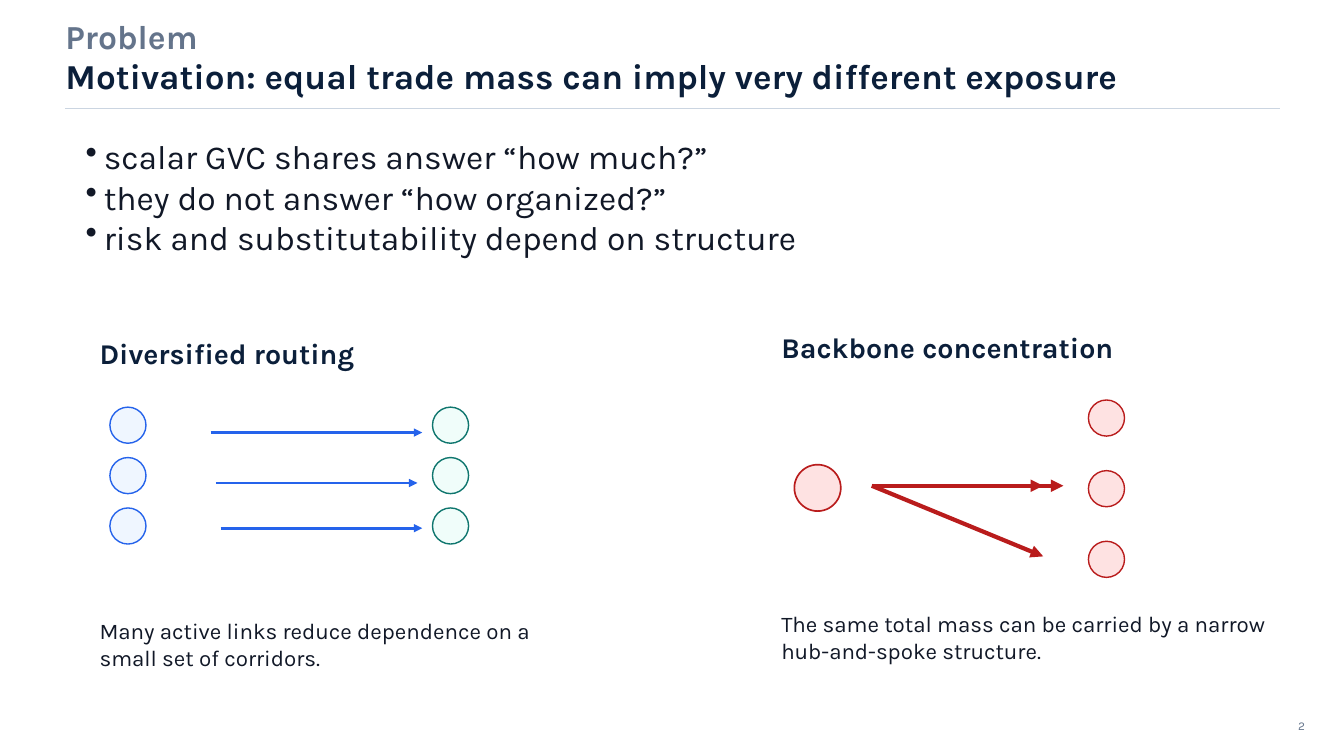
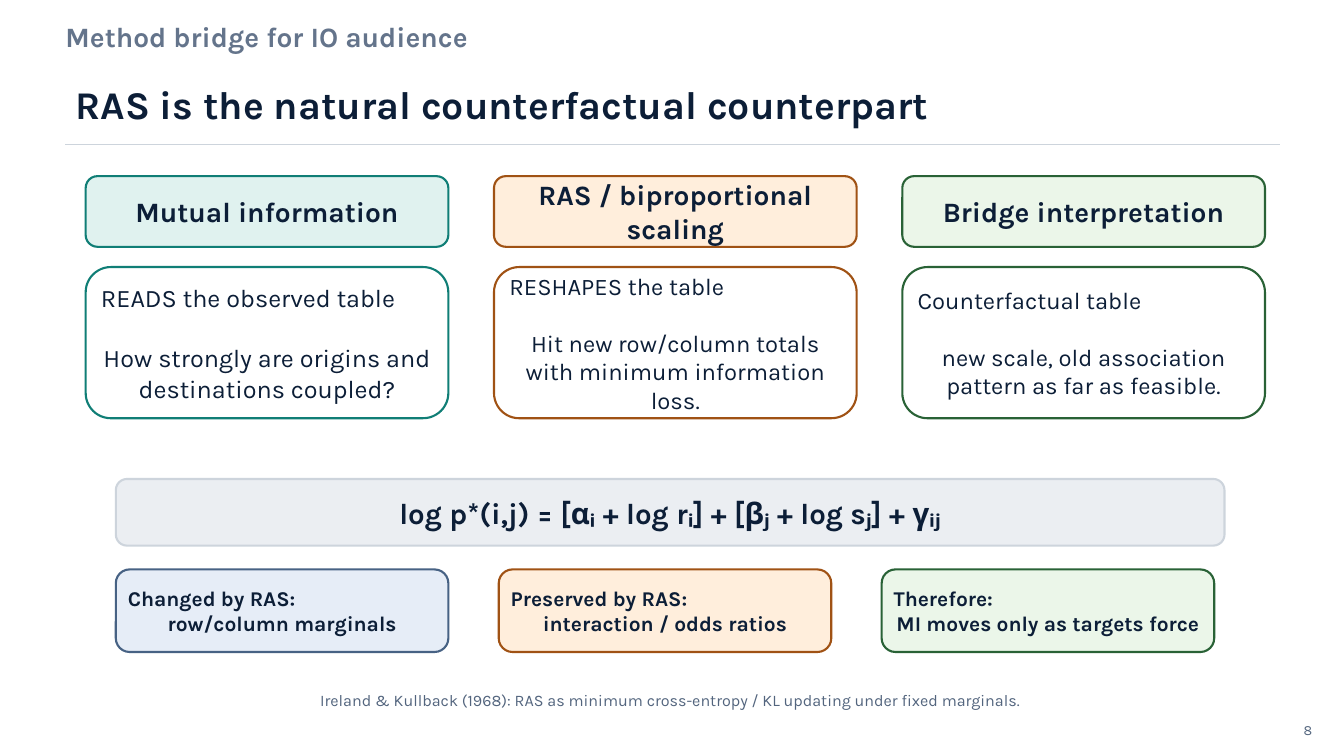
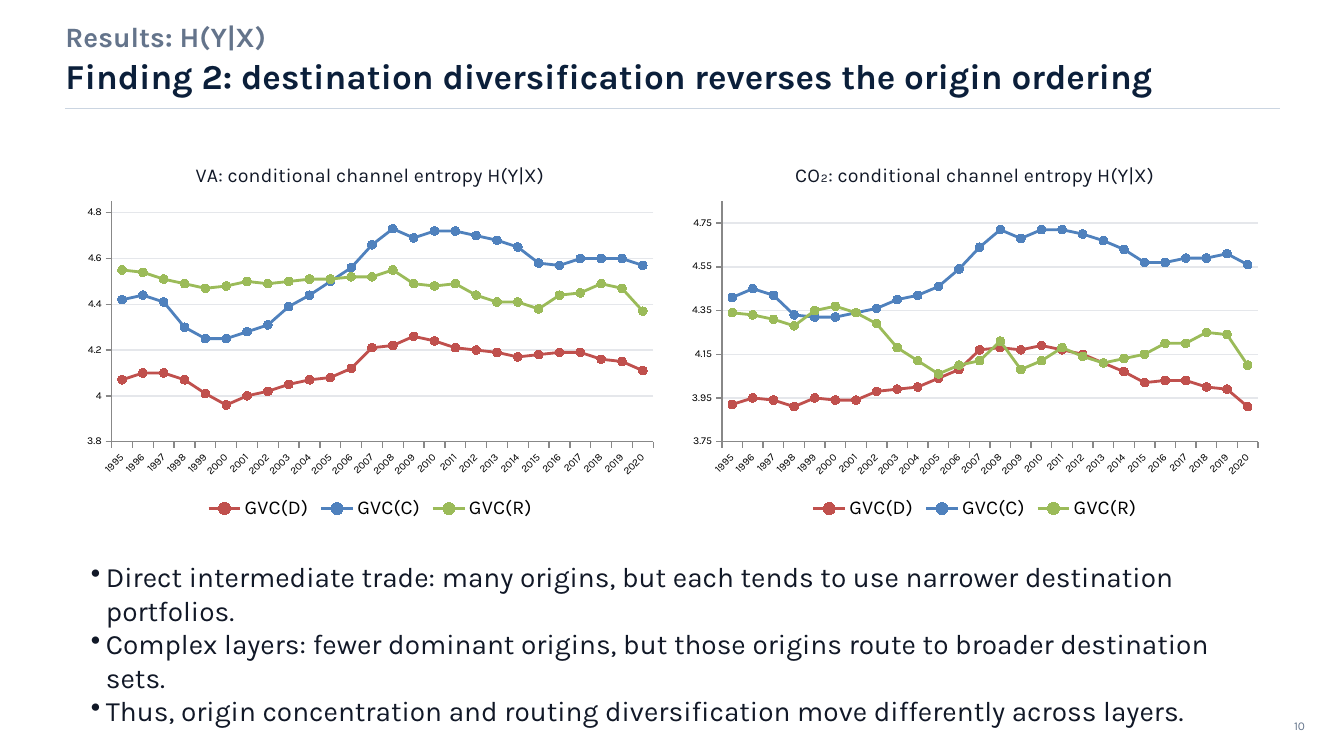
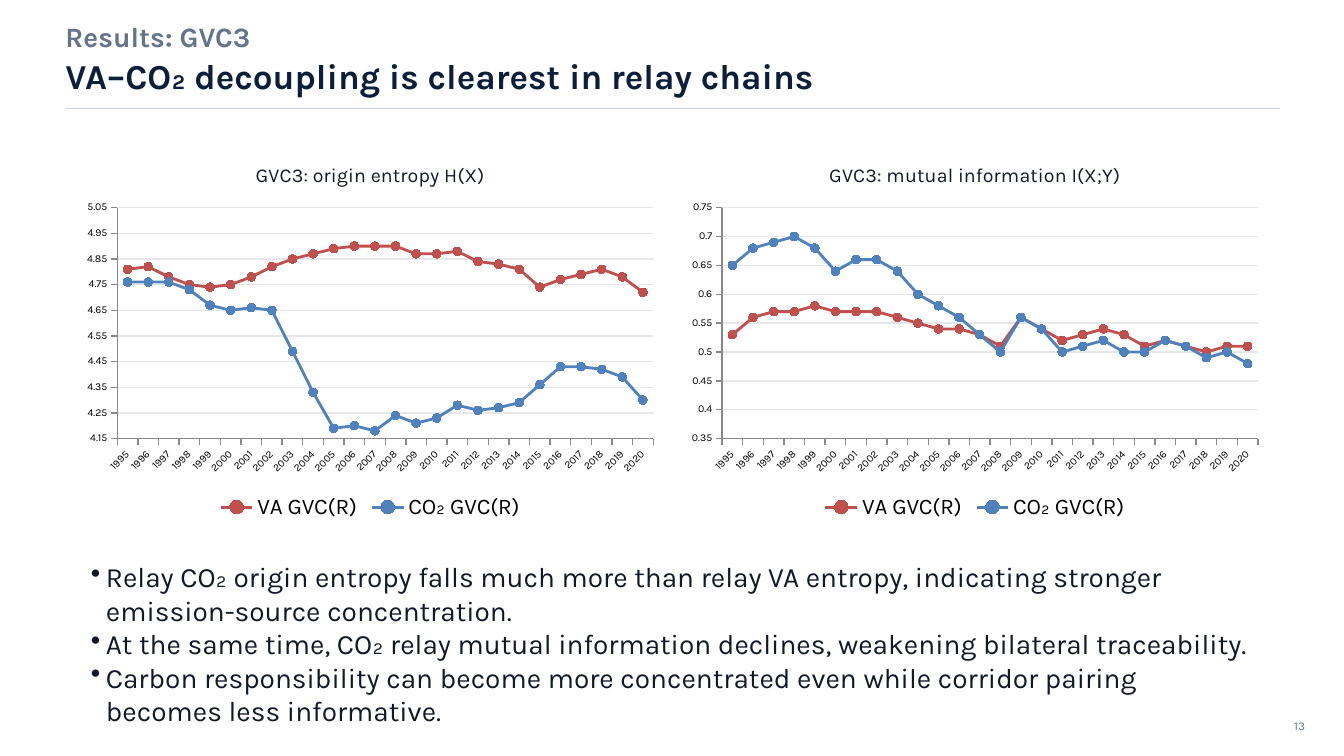
from lxml import etree
from pptx import Presentation
from pptx.chart.data import CategoryChartData
from pptx.dml.color import RGBColor
from pptx.enum.chart import (XL_CHART_TYPE, XL_LEGEND_POSITION, XL_MARKER_STYLE,
                             XL_TICK_LABEL_POSITION, XL_TICK_MARK)
from pptx.enum.shapes import MSO_CONNECTOR, MSO_SHAPE
from pptx.enum.text import MSO_ANCHOR, MSO_AUTO_SIZE, PP_ALIGN
from pptx.oxml.ns import qn
from pptx.util import Cm, Pt

LINE_MARKERS = XL_CHART_TYPE.LINE_MARKERS
BOTTOM = XL_LEGEND_POSITION.BOTTOM
DOT = XL_MARKER_STYLE.CIRCLE
LOW = XL_TICK_LABEL_POSITION.LOW
OUTSIDE = XL_TICK_MARK.OUTSIDE
STRAIGHT = MSO_CONNECTOR.STRAIGHT
OVAL, ROUNDED = MSO_SHAPE.OVAL, MSO_SHAPE.ROUNDED_RECTANGLE
TOP, MIDDLE = MSO_ANCHOR.TOP, MSO_ANCHOR.MIDDLE
LEFT, CENTER, RIGHT = PP_ALIGN.LEFT, PP_ALIGN.CENTER, PP_ALIGN.RIGHT

FONT = "Karla"
WHITE = RGBColor(0xFF, 0xFF, 0xFF)
BLACK = RGBColor(0, 0, 0)
NAVY = RGBColor(0x0B, 0x1F, 0x3A)
INK = RGBColor(0x11, 0x18, 0x27)
SLATE = RGBColor(0x64, 0x74, 0x8B)
RULE = RGBColor(0xCB, 0xD5, 0xE1)
AXIS = RGBColor(0x88, 0x88, 0x88)
GRID = RGBColor(0xE5, 0xE7, 0xEB)
BLUE = RGBColor(0x25, 0x63, 0xEB)
PALE_BLUE = RGBColor(0xEF, 0xF6, 0xFF)
GREEN = RGBColor(0x0F, 0x76, 0x6E)
PALE_GREEN = RGBColor(0xF0, 0xFD, 0xFA)
RED = RGBColor(0xB9, 0x1C, 0x1C)
PALE_RED = RGBColor(0xFE, 0xE2, 0xE2)
DEEP_NAVY = RGBColor(0x0C, 0x1E, 0x37)
STEEL = RGBColor(0x53, 0x65, 0x7E)
TEAL = RGBColor(0x10, 0x7E, 0x76)
PALE_TEAL = RGBColor(0xE0, 0xF2, 0xEF)
BROWN = RGBColor(0xA0, 0x52, 0x14)
PEACH = RGBColor(0xFF, 0xEE, 0xDC)
FOREST = RGBColor(0x29, 0x62, 0x36)
PALE_FOREST = RGBColor(0xEB, 0xF6, 0xE9)
DENIM = RGBColor(0x47, 0x62, 0x84)
PALE_DENIM = RGBColor(0xE6, 0xED, 0xF7)
SILVER = RGBColor(0xCD, 0xD4, 0xDC)
MIST = RGBColor(0xEB, 0xEE, 0xF2)
SERIES = (RGBColor(0xC0, 0x50, 0x4D), RGBColor(0x4F, 0x81, 0xBD), RGBColor(0x9B, 0xBB, 0x59))

YEARS = [str(year) for year in range(1995, 2021)]


def set_font(font, size, color, bold=False):
    font.name, font.size, font.bold = FONT, Pt(size), bold
    font.color.rgb = color


def set_line(line, color, width):
    line.color.rgb = color
    line.width = Pt(width)


class Deck:
    def __init__(self):
        self.prs = Presentation()
        self.prs.slide_width, self.prs.slide_height = Cm(33.87), Cm(19.05)
        self.s = None

    def new_slide(self, kicker, title, number, kicker_size=20):
        self.start(kicker, kicker_size)
        self.title(title, (1.65, 1.32, 30.23, 1.14), 25, NAVY)
        self.line((1.65, 2.74), (32.26, 2.74), RULE, 0.7)
        self.text(number, (32.13, 18.03, 0.76, 0.51), 8.5, SLATE, align=RIGHT)

    def start(self, kicker, size):
        self.s = self.prs.slides.add_slide(self.prs.slide_layouts[5])
        self.text(kicker, (1.65, 0.64, 10.67, 0.56), size, SLATE, bold=True)

    def frame(self, tf, anchor=MIDDLE, inset=(0, 0)):
        tf.word_wrap = True
        tf.auto_size = MSO_AUTO_SIZE.NONE
        tf.vertical_anchor = anchor
        tf.margin_left = tf.margin_right = Cm(inset[0])
        tf.margin_top = tf.margin_bottom = Cm(inset[1])
        return tf

    def run(self, p, text, size, color, bold=False, align=LEFT):
        p.alignment = align
        r = p.add_run()
        r.text = text
        set_font(r.font, size, color, bold)

    def title(self, text, box, size, color, inset=0):
        sp = self.s.shapes.title
        sp.left, sp.top, sp.width, sp.height = map(Cm, box)
        tf = self.frame(sp.text_frame, MIDDLE, (inset, 0))
        self.run(tf.paragraphs[0], text, size, color, True)

    def text(self, text, box, size, color, bold=False, align=LEFT):
        sp = self.s.shapes.add_textbox(*map(Cm, box))
        tf = self.frame(sp.text_frame)
        self.run(tf.paragraphs[0], text, size, color, bold, align)

    def bullets(self, items, box, size):
        tf = self.frame(self.s.shapes.add_textbox(*map(Cm, box)).text_frame, TOP)
        hang = Cm(size * 0.019)
        for i, item in enumerate(items):
            p = tf.add_paragraph() if i else tf.paragraphs[0]
            pPr = p._p.get_or_add_pPr()
            pPr.set("marL", str(hang))
            pPr.set("indent", str(-hang))
            etree.SubElement(pPr, qn("a:buChar")).set("char", "•")
            self.run(p, item, size, INK)

    def line(self, start, end, color, width, arrow=False):
        sp = self.s.shapes.add_connector(STRAIGHT, *map(Cm, start + end))
        set_line(sp.line, color, width)
        spPr = sp._element.spPr
        if arrow:
            etree.SubElement(spPr.find(qn("a:ln")), qn("a:tailEnd")).set("type", "triangle")
        etree.SubElement(spPr, qn("a:effectLst"))

    def shape(self, kind, box, fill, color, width):
        sp = self.s.shapes.add_shape(kind, *map(Cm, box))
        sp.shadow.inherit = False
        sp.fill.solid()
        sp.fill.fore_color.rgb = fill
        set_line(sp.line, color, width)
        return sp

    def node(self, left, top, fill, color, size=0.91, width=1):
        self.shape(OVAL, (left, top, size, size), fill, color, width)

    def card(self, box, fill, color, text, size, bold=False, lead=None, gap=0):
        sp = self.shape(ROUNDED, box, fill, color, 1.5)
        tf = self.frame(sp.text_frame, MIDDLE, (0.2, 0.1))
        p = tf.paragraphs[0]
        if lead:
            self.run(p, lead, size, DEEP_NAVY, bold)
            p = tf.add_paragraph()
            p.space_before = Pt(gap)
        self.run(p, text, size, DEEP_NAVY, bold, CENTER)

    def chart(self, left, title, series, low, high, unit, legend_size):
        data = CategoryChartData()
        data.categories = YEARS
        for name, values in series:
            data.add_series(name, values)
        chart = self.s.shapes.add_chart(
            LINE_MARKERS, Cm(left), Cm(3.68), Cm(14.86), Cm(9.53), data).chart
        set_font(chart.font, 10, BLACK)
        chart.has_title = True
        self.run(chart.chart_title.text_frame.paragraphs[0], title, 14, INK, align=CENTER)
        chart.has_legend = True
        chart.legend.position = BOTTOM
        chart.legend.include_in_layout = False
        set_font(chart.legend.font, legend_size, BLACK)
        years, values = chart.category_axis, chart.value_axis
        for axis in (years, values):
            axis.major_tick_mark = OUTSIDE
            set_font(axis.tick_labels.font, 7.5, BLACK)
            set_line(axis.format.line, AXIS, 1)
        years.tick_label_position = LOW
        years._element.find(qn("c:txPr")).find(qn("a:bodyPr")).set("rot", "-2700000")
        values.minimum_scale, values.maximum_scale, values.major_unit = low, high, unit
        set_line(values.major_gridlines.format.line, GRID, 1)
        plot = chart.plots[0]
        plot.vary_by_categories = False
        for ser, color in zip(plot.series, SERIES):
            ser.smooth = False
            set_line(ser.format.line, color, 2)
            ser.marker.style, ser.marker.size = DOT, 6
            ser.marker.format.fill.solid()
            ser.marker.format.fill.fore_color.rgb = color
            ser.marker.format.line.color.rgb = color

    def chart_pair(self, names, charts, legend_size, bullets):
        for i, (title, scale, rows) in enumerate(charts):
            self.chart(1.9 + i * 15.24, title, list(zip(names, rows)), *scale, legend_size)
        self.bullets(bullets, (2.29, 14.1, 29.46, 4.32), 20)


def motivation(deck):
    deck.new_slide("Problem", "Motivation: equal trade mass can imply very different exposure",
                   "2", kicker_size=24)
    for x1, x2, y in ((5.31, 10.64, 10.9), (5.44, 10.52, 12.17), (5.56, 10.64, 13.31)):
        deck.line((x1, y), (x2, y), BLUE, 2, arrow=True)
    for end in ((26.29, 12.24), (26.8, 12.24), (26.29, 14.02)):
        deck.line((21.97, 12.24), end, RED, 3, arrow=True)
    deck.node(20.02, 11.71, PALE_RED, RED, 1.17, 1.2)
    for i in range(3):
        deck.node(2.77, 10.26 + i * 1.27, PALE_BLUE, BLUE)
        deck.node(10.9, 10.26 + i * 1.27, PALE_GREEN, GREEN)
        deck.node(27.43, 10.08 + i * 1.78, PALE_RED, RED)
    panels = (
        (2.51, 8.53, 11.68, "Diversified routing",
         "Many active links reduce dependence on a small set of corridors."),
        (19.69, 8.36, 13.21, "Backbone concentration",
         "The same total mass can be carried by a narrow hub-and-spoke structure."),
    )
    for left, top, width, heading, note in panels:
        deck.text(heading, (left, top, width, 0.76), 20.4, NAVY, bold=True)
        deck.text(note, (left, top + 6.93, width, 1.52), 16, INK)
    deck.bullets(("scalar GVC shares answer “how much?”",
                  "they do not answer “how organized?”",
                  "risk and substitutability depend on structure"),
                 (2.16, 3.43, 28.7, 3.96), 24)


def method_bridge(deck):
    deck.start("Method bridge for IO audience", 20)
    deck.title("RAS is the natural counterfactual counterpart",
               (1.65, 1.83, 30.48, 1.55), 28, DEEP_NAVY, inset=0.25)
    deck.line((1.65, 3.65), (32.26, 3.65), SILVER, 0.7)
    columns = (
        ("Mutual information", PALE_TEAL, TEAL, "READS the observed table",
         "How strongly are origins and destinations coupled?", 18),
        ("RAS / biproportional scaling", PEACH, BROWN, "RESHAPES the table",
         "Hit new row/column totals with minimum information loss.", 17),
        ("Bridge interpretation", PALE_FOREST, FOREST, "Counterfactual table",
         "new scale, old association pattern as far as feasible.", 17),
    )
    for i, (heading, fill, color, lead, body, size) in enumerate(columns):
        left = 2.16 + i * 10.29
        deck.card((left, 4.44, 9.14, 1.78), fill, color, heading, 20, bold=True)
        deck.card((left, 6.73, 9.14, 3.81), WHITE, color, body, size,
                  lead=lead, gap=size * 1.2)
    deck.card((2.92, 12.07, 27.94, 1.68), MIST, SILVER,
              "log p*(i,j) = [αᵢ + log rᵢ] + [βⱼ + log sⱼ] + γᵢⱼ", 21, bold=True)
    notes = (
        (PALE_DENIM, DENIM, "Changed by RAS:", "row/column marginals"),
        (PEACH, BROWN, "Preserved by RAS:", "interaction / odds ratios"),
        (PALE_FOREST, FOREST, "Therefore:", "MI moves only as targets force"),
    )
    for i, (fill, color, lead, body) in enumerate(notes):
        deck.card((2.92 + i * 9.65, 14.35, 8.38, 2.08), fill, color, body, 15,
                  bold=True, lead=lead)
    deck.text("Ireland & Kullback (1968): RAS as minimum cross-entropy / KL updating "
              "under fixed marginals.", (2.54, 17.4, 28.7, 0.5), 11.5, STEEL, align=CENTER)
    deck.text("8", (32.18, 18.16, 0.89, 0.46), 10, STEEL, align=RIGHT)


def destination_finding(deck):
    deck.new_slide("Results: H(Y|X)",
                   "Finding 2: destination diversification reverses the origin ordering", "10")
    charts = (
        ("VA: conditional channel entropy H(Y|X)", (3.8, 4.85, 0.2), (
            (4.07, 4.1, 4.1, 4.07, 4.01, 3.96, 4, 4.02, 4.05, 4.07, 4.08, 4.12, 4.21,
             4.22, 4.26, 4.24, 4.21, 4.2, 4.19, 4.17, 4.18, 4.19, 4.19, 4.16, 4.15, 4.11),
            (4.42, 4.44, 4.41, 4.3, 4.25, 4.25, 4.28, 4.31, 4.39, 4.44, 4.5, 4.56, 4.66,
             4.73, 4.69, 4.72, 4.72, 4.7, 4.68, 4.65, 4.58, 4.57, 4.6, 4.6, 4.6, 4.57),
            (4.55, 4.54, 4.51, 4.49, 4.47, 4.48, 4.5, 4.49, 4.5, 4.51, 4.51, 4.52, 4.52,
             4.55, 4.49, 4.48, 4.49, 4.44, 4.41, 4.41, 4.38, 4.44, 4.45, 4.49, 4.47, 4.37))),
        ("CO₂: conditional channel entropy H(Y|X)", (3.75, 4.85, 0.2), (
            (3.92, 3.95, 3.94, 3.91, 3.95, 3.94, 3.94, 3.98, 3.99, 4, 4.04, 4.08, 4.17,
             4.18, 4.17, 4.19, 4.17, 4.15, 4.11, 4.07, 4.02, 4.03, 4.03, 4, 3.99, 3.91),
            (4.41, 4.45, 4.42, 4.33, 4.32, 4.32, 4.34, 4.36, 4.4, 4.42, 4.46, 4.54, 4.64,
             4.72, 4.68, 4.72, 4.72, 4.7, 4.67, 4.63, 4.57, 4.57, 4.59, 4.59, 4.61, 4.56),
            (4.34, 4.33, 4.31, 4.28, 4.35, 4.37, 4.34, 4.29, 4.18, 4.12, 4.06, 4.1, 4.12,
             4.21, 4.08, 4.12, 4.18, 4.14, 4.11, 4.13, 4.15, 4.2, 4.2, 4.25, 4.24, 4.1))),
    )
    deck.chart_pair(("GVC(D)", "GVC(C)", "GVC(R)"), charts, 14, (
        "Direct intermediate trade: many origins, but each tends to use narrower "
        "destination portfolios.",
        "Complex layers: fewer dominant origins, but those origins route to broader "
        "destination sets.",
        "Thus, origin concentration and routing diversification move differently "
        "across layers."))


def relay_chains(deck):
    deck.new_slide("Results: GVC3", "VA–CO₂ decoupling is clearest in relay chains", "13")
    charts = (
        ("GVC3: origin entropy H(X)", (4.15, 5.05, 0.1), (
            (4.81, 4.82, 4.78, 4.75, 4.74, 4.75, 4.78, 4.82, 4.85, 4.87, 4.89, 4.9, 4.9,
             4.9, 4.87, 4.87, 4.88, 4.84, 4.83, 4.81, 4.74, 4.77, 4.79, 4.81, 4.78, 4.72),
            (4.76, 4.76, 4.76, 4.73, 4.67, 4.65, 4.66, 4.65, 4.49, 4.33, 4.19, 4.2, 4.18,
             4.24, 4.21, 4.23, 4.28, 4.26, 4.27, 4.29, 4.36, 4.43, 4.43, 4.42, 4.39, 4.3))),
        ("GVC3: mutual information I(X;Y)", (0.35, 0.75, 0.05), (
            (0.53, 0.56, 0.57, 0.57, 0.58, 0.57, 0.57, 0.57, 0.56, 0.55, 0.54, 0.54, 0.53,
             0.51, 0.56, 0.54, 0.52, 0.53, 0.54, 0.53, 0.51, 0.52, 0.51, 0.5, 0.51, 0.51),
            (0.65, 0.68, 0.69, 0.7, 0.68, 0.64, 0.66, 0.66, 0.64, 0.6, 0.58, 0.56, 0.53,
             0.5, 0.56, 0.54, 0.5, 0.51, 0.52, 0.5, 0.5, 0.52, 0.51, 0.49, 0.5, 0.48))),
    )
    deck.chart_pair(("VA GVC(R)", "CO₂ GVC(R)"), charts, 16, (
        "Relay CO₂ origin entropy falls much more than relay VA entropy, indicating "
        "stronger emission-source concentration.",
        "At the same time, CO₂ relay mutual information declines, weakening bilateral "
        "traceability.",
        "Carbon responsibility can become more concentrated even while corridor pairing "
        "becomes less informative."))


def main():
    deck = Deck()
    for build in (motivation, method_bridge, destination_finding, relay_chains):
        build(deck)
    deck.prs.save("out.pptx")


if __name__ == "__main__":
    main()
